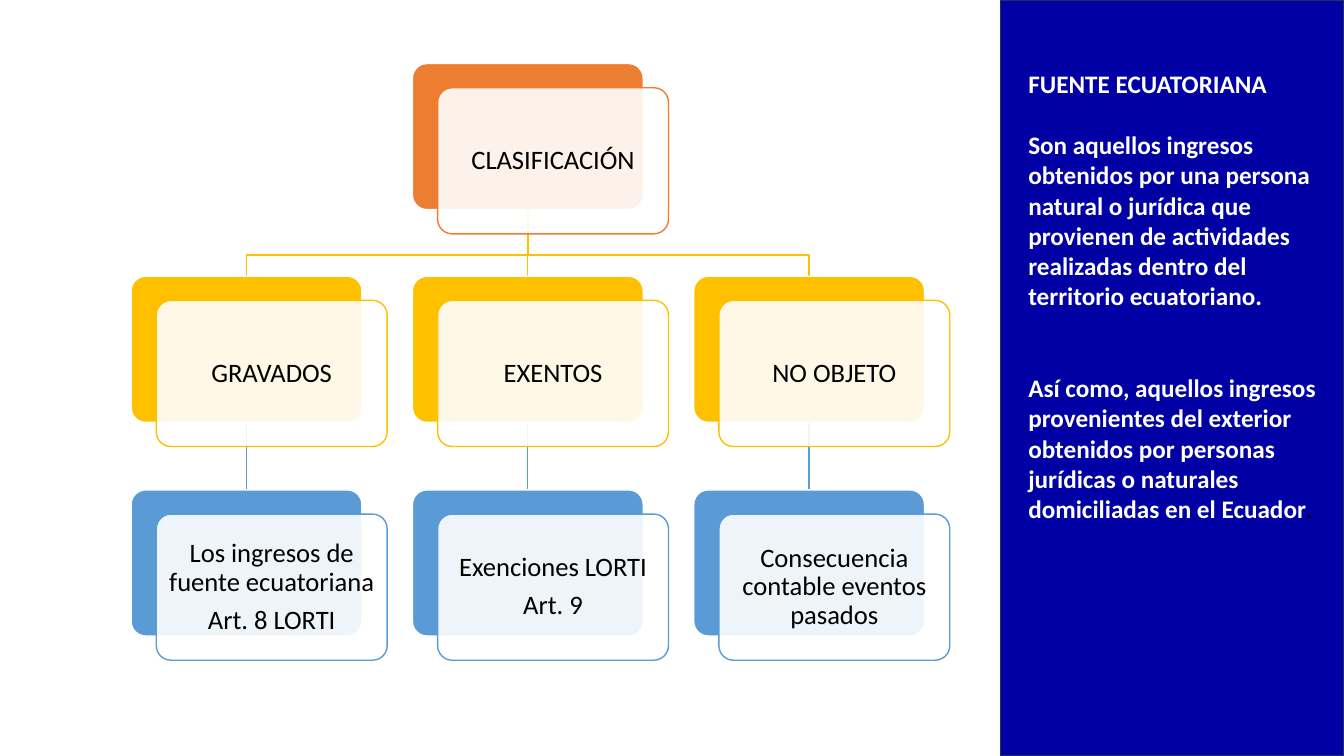
from lxml import etree
from pptx import Presentation
from pptx import util as u
from pptx.dml.color import RGBColor
from pptx.enum import shapes, text
from pptx.oxml.ns import qn

ORANGE = RGBColor(0xED, 0x7D, 0x31)
GOLD = RGBColor(0xFF, 0xC0, 0x00)
BLUE = RGBColor(0x5B, 0x9B, 0xD5)
NAVY = RGBColor(0x00, 0x00, 0xA4)
EDGE = RGBColor(0x1E, 0x32, 0x56)
WHITE = RGBColor(0xFF, 0xFF, 0xFF)
BLACK = RGBColor(0x00, 0x00, 0x00)

WIDE, HIGH = 2.29, 1.45
STEP = 2.79
ROWS = (0.63, 2.74, 4.86)
ROOT = "CLASIFICACIÓN"
KINDS = (
    ("GRAVADOS", ("Los ingresos de fuente ecuatoriana", "Art. 8 LORTI")),
    ("EXENTOS", ("Exenciones LORTI", "Art. 9")),
    ("NO OBJETO", ("Consecuencia contable eventos pasados",)),
)
NOTES = (
    (0, (("FUENTE ECUATORIANA", WHITE, True),)),
    (22, (("Son aquellos ingresos obtenidos por una persona natural o jurídica que "
           "provienen de actividades realizadas dentro del territorio ecuatoriano.",
           WHITE, True),)),
    (44, (("Así como, aquellos ingresos provenientes del exterior obtenidos por "
           "personas jurídicas o naturales domiciliadas en el Ecuador", WHITE, True),
          (".", BLACK, False))),
)


def add_run(para, words, size, color, bold=False):
    run = para.add_run()
    run.text = words
    run.font.name = "Calibri"
    run.font.size = u.Pt(size)
    run.font.bold = bold
    run.font.color.rgb = color


def add_box(slide, kind, x, y, w, h, fill, line):
    box = slide.shapes.add_shape(
        kind, u.Inches(x), u.Inches(y), u.Inches(w), u.Inches(h))
    box.shadow.inherit = False
    box.fill.solid()
    box.fill.fore_color.rgb = fill
    box.line.color.rgb = line
    box.line.width = u.Pt(1)
    return box


def add_card(slide, x, y, color, lines):
    kind = shapes.MSO_SHAPE.ROUNDED_RECTANGLE
    back = add_box(slide, kind, x, y, WIDE, HIGH, color, WHITE)
    face = add_box(slide, kind, x + 0.25, y + 0.24, WIDE, HIGH, WHITE, color)
    back.adjustments[0] = face.adjustments[0] = 0.1
    tint = face.fill._xPr.find(qn("a:solidFill"))[0]
    etree.SubElement(tint, qn("a:alpha")).set("val", "90000")
    frame = face.text_frame
    frame.word_wrap = True
    frame.vertical_anchor = text.MSO_ANCHOR.MIDDLE
    frame.margin_left = frame.margin_right = u.Inches(0.08)
    frame.margin_top = frame.margin_bottom = u.Inches(0.08)
    for i, words in enumerate(lines):
        para = frame.add_paragraph() if i else frame.paragraphs[0]
        para.alignment = text.PP_ALIGN.CENTER
        para.line_spacing = 0.9
        para.space_after = u.Pt(6.65)
        add_run(para, words, 19, BLACK)


def add_link(slide, x, y, to_x, to_y, color):
    if x == to_x:
        link = slide.shapes.add_connector(
            shapes.MSO_CONNECTOR.STRAIGHT,
            u.Inches(x), u.Inches(y), u.Inches(to_x), u.Inches(to_y))
        etree.SubElement(link._element.spPr, qn("a:effectLst"))
    else:
        bend = to_y - 0.21
        path = slide.shapes.build_freeform(u.Inches(x), u.Inches(y))
        path.add_line_segments(
            [(u.Inches(a), u.Inches(b))
             for a, b in ((x, bend), (to_x, bend), (to_x, to_y))], close=False)
        link = path.convert_to_shape()
        link.fill.background()
        link.shadow.inherit = False
    link.line.color.rgb = color
    link.line.width = u.Pt(1)


def add_tree(slide, left):
    top, mid, low = ROWS
    cols = [left + i * STEP for i in range(len(KINDS))]
    half = WIDE / 2
    for x in cols:
        add_link(slide, x + half, mid + HIGH, x + half, low, BLUE)
        add_link(slide, cols[1] + half, top + HIGH, x + half, mid, GOLD)
    add_card(slide, cols[1], top, ORANGE, (ROOT,))
    for x, (name, lines) in zip(cols, KINDS):
        add_card(slide, x, mid, GOLD, (name,))
        add_card(slide, x, low, BLUE, lines)


def add_panel(slide, x, y, w, h):
    add_box(slide, shapes.MSO_SHAPE.RECTANGLE, x, y, w, h, NAVY, EDGE)
    note = slide.shapes.add_textbox(
        u.Inches(x + 0.18), u.Inches(y + 0.63), u.Inches(w - 0.36), u.Inches(5.55))
    frame = note.text_frame
    frame.word_wrap = True
    for i, (gap, runs) in enumerate(NOTES):
        para = frame.add_paragraph() if i else frame.paragraphs[0]
        para.space_before = u.Pt(gap)
        for words, color, bold in runs:
            add_run(para, words, 18, color, bold)


def main():
    deck = Presentation()
    deck.slide_width = u.Inches(13.33)
    deck.slide_height = u.Inches(7.5)
    slide = deck.slides.add_slide(deck.slide_layouts[6])
    add_tree(slide, 1.3)
    add_panel(slide, 9.92, 0, 3.41, 7.5)
    deck.save("out.pptx")


if __name__ == "__main__":
    main()
